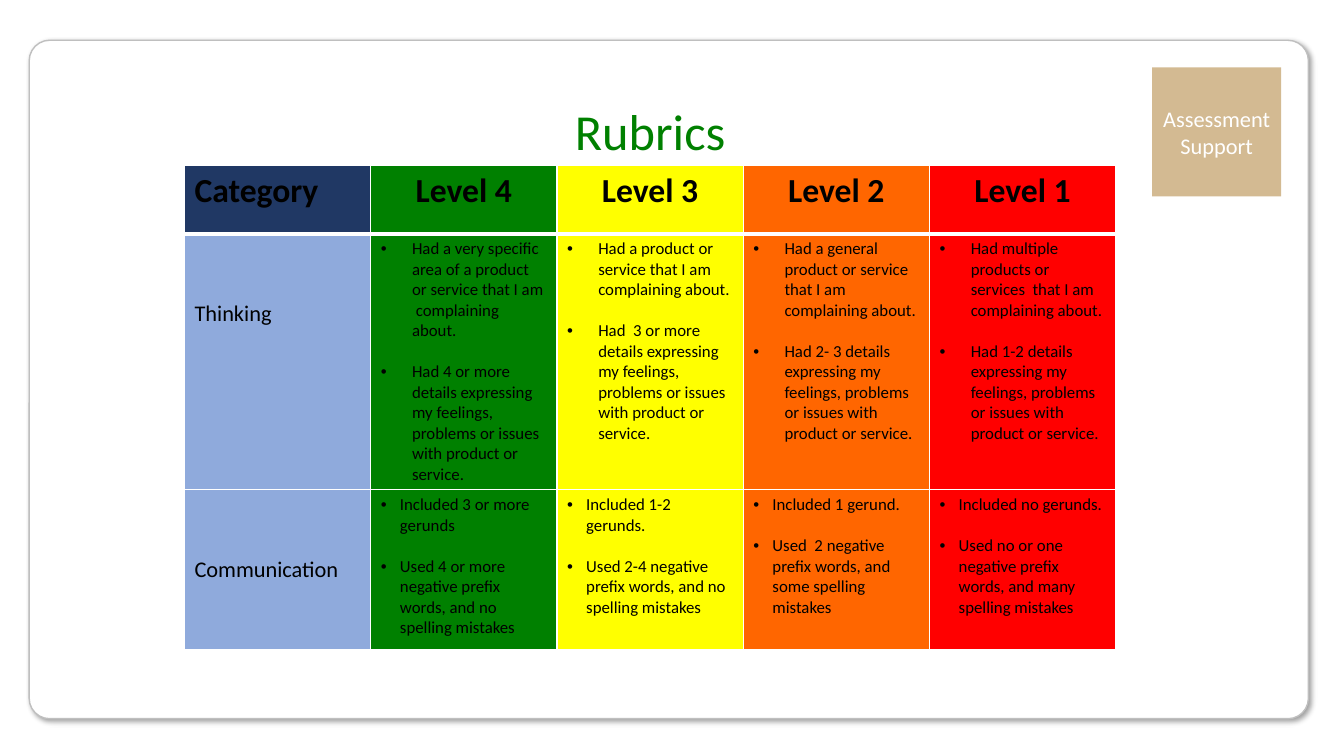
from lxml import etree
from pptx import Presentation
from pptx.dml.color import RGBColor
from pptx.enum.shapes import MSO_SHAPE
from pptx.enum.text import MSO_ANCHOR, PP_ALIGN
from pptx.oxml import parse_xml
from pptx.oxml.ns import nsdecls, qn
from pptx.util import Inches, Pt

ROUND, RECT = MSO_SHAPE.ROUNDED_RECTANGLE, MSO_SHAPE.RECTANGLE
LEFT, CENTER = PP_ALIGN.LEFT, PP_ALIGN.CENTER
TOP, MIDDLE, BOTTOM = MSO_ANCHOR.TOP, MSO_ANCHOR.MIDDLE, MSO_ANCHOR.BOTTOM
COLS, ROWS = 40, 22.5
UNIT = Inches(13.33) / COLS
FONT = "Calibri"
HUES = {
    "white": "FFFFFF", "black": "000000", "gray": "BFBFBF", "tan": "D3BA92",
    "navy": "203864", "blue": "8FAADC", "green": "008000",
    "yellow": "FFFF00", "orange": "FF6600", "red": "FF0000",
}
LEVELS = ["green", "yellow", "orange", "red"]
HEADS = ["Category", "Level 4", "Level 3", "Level 2", "Level 1"]
DETAILS = "details expressing my feelings, problems or issues with product or service."
THINK = [
    ("a very specific area of a product or service that", "4 or more"),
    ("a product or service that", " 3 or more"),
    ("a general product or service that", "2- 3"),
    ("multiple products or services  that", "1-2"),
]
SPEAK = [
    ("3 or more gerunds", "4 or more negative prefix words, and no"),
    ("1-2 gerunds.", "2-4 negative prefix words, and no"),
    ("1 gerund.", " 2 negative prefix words, and some"),
    ("no gerunds.", "no or one negative prefix words, and many"),
]


def grid(*spans):
    """Turn grid spans into lengths."""
    return [round(UNIT * span) for span in spans]


def color(name):
    """Look up a colour by name."""
    return RGBColor.from_string(HUES[name])


def style(para, size, hue="black", align=LEFT, bold=False):
    """Set the look of a paragraph."""
    para.alignment = align
    font = para.font
    font.name, font.size, font.bold = FONT, Pt(size), bold
    font.color.rgb = color(hue)


def panel(slide, kind, spans, fill):
    """Add a flat filled shape."""
    shape = slide.shapes.add_shape(kind, *grid(*spans))
    shape.shadow.inherit = False
    shape.fill.solid()
    shape.fill.fore_color.rgb = color(fill)
    shape.line.fill.background()
    return shape


def card(slide):
    """Add the rounded frame with its shadow."""
    shape = panel(slide, ROUND, (0.87, 1.2, 38.07, 20.19), "white")
    shape.adjustments[0] = 0.03
    shape.line.color.rgb = color("gray")
    shape.line.width = Pt(1)
    effect = shape.element.spPr.find(qn("a:effectLst"))
    effect.append(parse_xml(
        f'<a:outerShdw {nsdecls("a")} blurRad="{Pt(4)}" dist="{Pt(3)}" dir="2700000"'
        f' algn="tl" rotWithShape="0"><a:srgbClr val="{HUES["black"]}">'
        '<a:alpha val="40000"/></a:srgbClr></a:outerShdw>'))


def tag(slide):
    """Add the corner label."""
    shape = panel(slide, RECT, (34.29, 2.01, 3.84, 3.84), "tan")
    frame = shape.text_frame
    frame.word_wrap = True
    frame.vertical_anchor = MIDDLE
    frame.text = "Assessment Support"
    style(frame.paragraphs[0], 16, "white", CENTER)


def title(slide):
    """Place the title above the table."""
    shape = slide.shapes.title
    shape.left, shape.top, shape.width, shape.height = grid(6.54, 2.82, 25.62, 2.13)
    frame = shape.text_frame
    frame.vertical_anchor = TOP
    frame.text = "Rubrics"
    style(frame.paragraphs[0], 36, "green", CENTER)
    slide.shapes.element.append(shape.element)


def border(cell, top=1, bottom=1):
    """Draw white lines around a cell."""
    props = cell._tc.get_or_add_tcPr()
    sides = {"lnL": 1, "lnR": 1, "lnT": top, "lnB": bottom}
    for spot, (side, width) in enumerate(sides.items()):
        line = parse_xml(
            f'<a:{side} {nsdecls("a")} w="{Pt(width)}"><a:solidFill>'
            f'<a:srgbClr val="{HUES["white"]}"/></a:solidFill></a:{side}>')
        props.insert(spot, line)


def paint(cell, hue, top=1, bottom=1):
    """Fill and frame a cell."""
    cell.fill.solid()
    cell.fill.fore_color.rgb = color(hue)
    cell.vertical_anchor = TOP
    border(cell, top, bottom)


def label(cell, text):
    """Write a row label."""
    cell.text = text
    cell.margin_top = Inches(0.66)
    style(cell.text_frame.paragraphs[0], 16)


def points(cell, items, indent):
    """Write a bulleted list in a cell."""
    frame = cell.text_frame
    frame.text = "\n".join(items)
    for spot, para in enumerate(frame.paragraphs):
        if spot:
            para.space_before = Pt(14.65)
        props = para._p.get_or_add_pPr()
        props.set("marL", str(Inches(indent)))
        props.set("indent", str(-Inches(indent)))
        etree.SubElement(props, qn("a:buFont")).set("typeface", "Arial")
        etree.SubElement(props, qn("a:buChar")).set("char", "•")
        style(para, 12)


def rubric(slide):
    """Build the rubric table."""
    highs = grid(2.04, 7.62, 4.77)
    spans = grid(5.49, 4.92, 27.72)
    table = slide.shapes.add_table(3, 5, *spans, sum(highs)).table
    for row, high in zip(table.rows, highs):
        row.height = high
    for spot, (text, hue) in enumerate(zip(HEADS, ["navy"] + LEVELS)):
        cell = table.cell(0, spot)
        cell.text = text
        style(cell.text_frame.paragraphs[0], 24, align=CENTER if spot else LEFT, bold=True)
        paint(cell, hue, bottom=3)
    think = [(f"Had {what} I am  complaining about.", f"Had {count} {DETAILS}")
             for what, count in THINK]
    speak = [(f"Included {what}", f"Used {count} spelling mistakes")
             for what, count in SPEAK]
    body = [("Thinking", think, 0.31, 3), ("Communication", speak, 0.19, 1)]
    for row, (name, lists, indent, top) in enumerate(body, 1):
        label(table.cell(row, 0), name)
        paint(table.cell(row, 0), "blue", top)
        for col, (items, hue) in enumerate(zip(lists, LEVELS), 1):
            points(table.cell(row, col), items, indent)
            paint(table.cell(row, col), hue, top)


def main():
    """Build and save the slide."""
    deck = Presentation()
    deck.slide_width, deck.slide_height = grid(COLS, ROWS)
    slide = deck.slides.add_slide(deck.slide_layouts[5])
    card(slide)
    tag(slide)
    rubric(slide)
    title(slide)
    deck.save("out.pptx")


if __name__ == "__main__":
    main()
